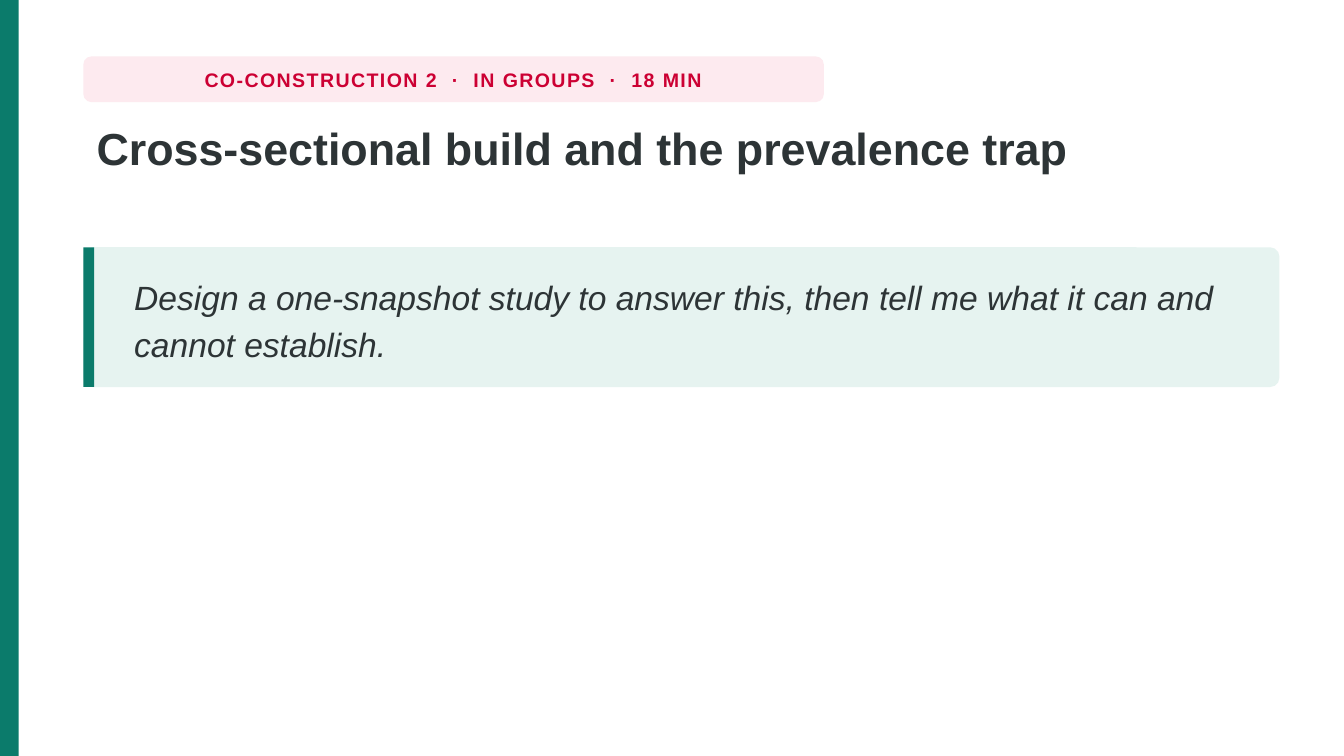
import dataclasses
import typing

import pptx
import pptx.dml.color
import pptx.enum.shapes
import pptx.enum.text
import pptx.util

RGBColor = pptx.dml.color.RGBColor
Kind = pptx.enum.shapes.MSO_SHAPE
Align = pptx.enum.text.PP_ALIGN
Anchor = pptx.enum.text.MSO_ANCHOR

TEAL = RGBColor(0x0B, 0x7B, 0x6B)
MINT = RGBColor(0xE6, 0xF3, 0xF0)
PINK = RGBColor(0xFD, 0xEA, 0xEF)
RED = RGBColor(0xCC, 0x00, 0x33)
INK = RGBColor(0x2D, 0x34, 0x36)

CELL = pptx.util.Inches(0.02)
COLS, ROWS = 500, 281.25
LEFT, WIDE = 31, 445


class Box(typing.NamedTuple):
    col: float
    row: float
    cols: float
    rows: float

    def place(self) -> list[int]:
        return [round(n * CELL) for n in self]


@dataclasses.dataclass
class Panel:
    box: Box
    fill: RGBColor
    curve: float = 0


@dataclasses.dataclass
class Label:
    box: Box
    text: str
    size: float
    color: RGBColor
    bold: bool = False
    slant: bool = False
    align: Align = Align.LEFT
    anchor: Anchor = Anchor.TOP
    lead: float = 1.0
    track: float = 0
    wrap: bool = True


TAG = Box(LEFT, 21, 275.5, 17)
QUOTE = Box(LEFT, 92, WIDE, 52)

PANELS = [
    Panel(Box(0, 0, 7, ROWS), TEAL),
    Panel(TAG, PINK, 3),
    Panel(QUOTE, MINT, 3.5),
    Panel(QUOTE._replace(cols=4), TEAL),
]

LABELS = [
    Label(TAG, "CO-CONSTRUCTION 2  ·  IN GROUPS  ·  18 MIN", 10.5, RED,
          bold=True, align=Align.CENTER, anchor=Anchor.MIDDLE,
          track=0.8, wrap=False),
    Label(Box(LEFT, 42, WIDE, 51),
          "Cross-sectional build and the prevalence trap", 24, INK,
          bold=True, lead=1.02),
    Label(Box(45, 94.5, 417.5, 47),
          "Design a one-snapshot study to answer this, then tell me "
          "what it can and cannot establish.", 18, INK,
          slant=True, anchor=Anchor.MIDDLE, lead=1.16),
]


def draw_panel(slide: typing.Any, panel: Panel) -> None:
    kind = Kind.ROUNDED_RECTANGLE if panel.curve else Kind.RECTANGLE
    shape = slide.shapes.add_shape(kind, *panel.box.place())
    if panel.curve:
        shape.adjustments[0] = panel.curve / panel.box.rows
    shape.shadow.inherit = False
    shape.fill.solid()
    shape.fill.fore_color.rgb = panel.fill
    shape.line.fill.background()


def draw_label(slide: typing.Any, label: Label) -> None:
    frame = slide.shapes.add_textbox(*label.box.place()).text_frame
    frame.word_wrap = label.wrap
    frame.vertical_anchor = label.anchor
    para = frame.paragraphs[0]
    para.alignment = label.align
    para.line_spacing = label.lead
    run = para.add_run()
    run.text = label.text
    if label.track:
        run._r.get_or_add_rPr().set("spc", str(round(label.track * 100)))
    font = para.font
    font.name = "Arial"
    font.size = pptx.util.Pt(label.size)
    font.bold = label.bold
    font.italic = label.slant
    font.color.rgb = label.color


def main() -> None:
    deck = pptx.Presentation()
    deck.slide_width = round(COLS * CELL)
    deck.slide_height = round(ROWS * CELL)
    slide = deck.slides.add_slide(deck.slide_layouts[6])
    for panel in PANELS:
        draw_panel(slide, panel)
    for label in LABELS:
        draw_label(slide, label)
    deck.save("out.pptx")


if __name__ == "__main__":
    main()
